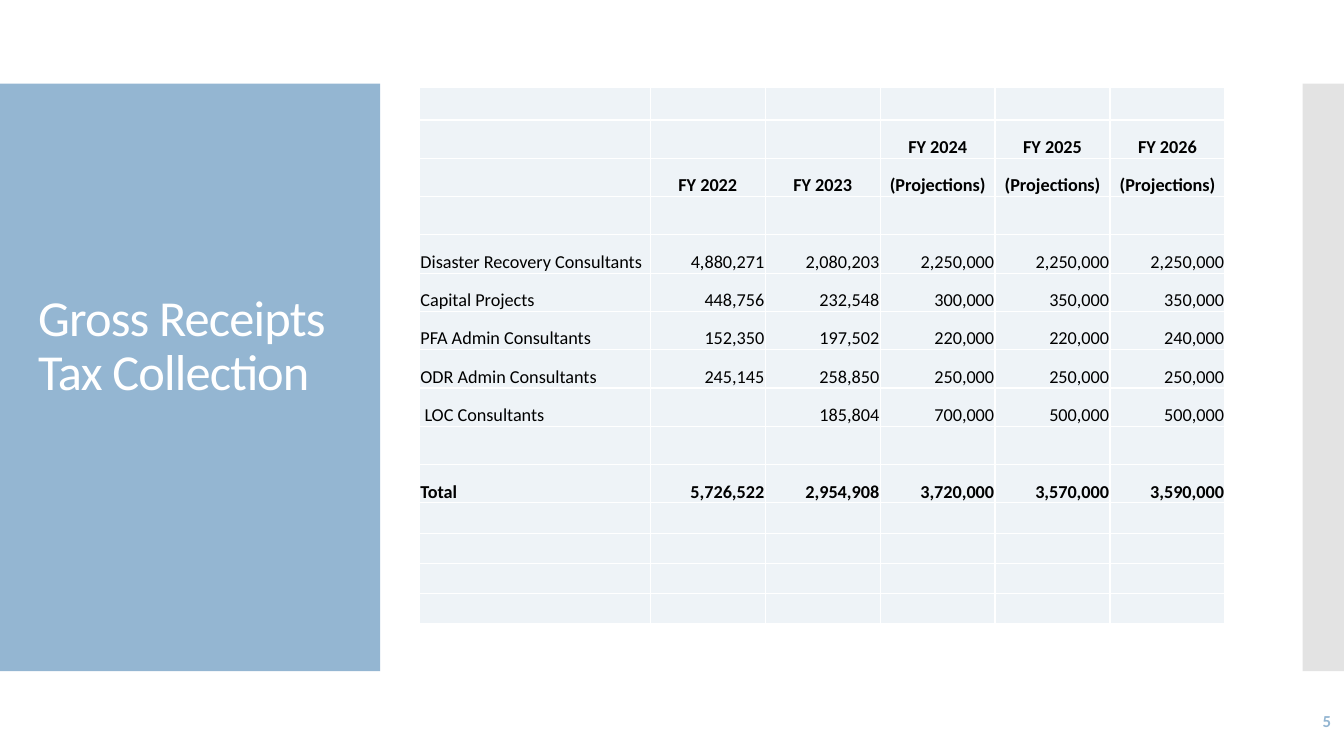
from dataclasses import dataclass

from lxml import etree
from pptx import Presentation
from pptx.dml.color import RGBColor
from pptx.enum.shapes import MSO_SHAPE
from pptx.enum.text import MSO_ANCHOR, PP_ALIGN
from pptx.oxml.ns import qn
from pptx.util import Inches, Pt

RECT = MSO_SHAPE.RECTANGLE
MIDDLE, BOTTOM = MSO_ANCHOR.MIDDLE, MSO_ANCHOR.BOTTOM
LEFT, CENTER, RIGHT = PP_ALIGN.LEFT, PP_ALIGN.CENTER, PP_ALIGN.RIGHT


@dataclass(frozen=True)
class Theme:
    font: str = "Calibri"
    blue: str = "94B6D2"
    gray: str = "C8C8C8"
    white: str = "FFFFFF"
    black: str = "000000"
    pale: str = "EEF3F7"
    title: int = 36
    body: int = 13
    note: int = 12


BLANK = [""] * 6
HEAD = [
    BLANK,
    ["", "", "", "FY 2024", "FY 2025", "FY 2026"],
    ["", "FY 2022", "FY 2023"] + ["(Projections)"] * 3,
    BLANK,
]
ITEMS = [
    ["Disaster Recovery Consultants", "4,880,271", "2,080,203",
     "2,250,000", "2,250,000", "2,250,000"],
    ["Capital Projects", "448,756", "232,548", "300,000", "350,000", "350,000"],
    ["PFA Admin Consultants", "152,350", "197,502", "220,000", "220,000", "240,000"],
    ["ODR Admin Consultants", "245,145", "258,850", "250,000", "250,000", "250,000"],
    [" LOC Consultants", "", "185,804", "700,000", "500,000", "500,000"],
    BLANK,
]
TOTAL = ["Total", "5,726,522", "2,954,908", "3,720,000", "3,570,000", "3,590,000"]
ROWS = HEAD + ITEMS + [TOTAL] + [BLANK] * 4
WIDTHS = [2.29] + [1.14] * 5
HEIGHTS = [0.32] + [0.38] * 10 + [0.3] * 4


class Deck:
    def __init__(self, theme):
        self.theme = theme
        self.prs = Presentation()
        self.prs.slide_width = Inches(13.33)
        self.prs.slide_height = Inches(7.5)
        self.slide = self.prs.slides.add_slide(self.prs.slide_layouts[6])

    def panel(self, box, color, alpha=None):
        """Draw a plain block; alpha is its opacity in percent."""
        shape = self.slide.shapes.add_shape(RECT, *map(Inches, box))
        shape.shadow.inherit = False
        shape.line.fill.background()
        shape.fill.solid()
        shape.fill.fore_color.rgb = RGBColor.from_string(color)
        if alpha is not None:
            tint = shape.fill._xPr.find(".//" + qn("a:srgbClr"))
            etree.SubElement(tint, qn("a:alpha"), val=str(alpha * 1000))

    def run(self, para, text, size, color, bold=False):
        run = para.add_run()
        run.text = text
        font = run.font
        font.name, font.size, font.bold = self.theme.font, Pt(size), bold
        font.color.rgb = RGBColor.from_string(color)
        return run

    def text(self, box, text, size, color, bold=False, align=LEFT,
             lead=1.0, track=0, foot=0.05):
        """Add a text box; track is letter spacing in points, foot the bottom inset."""
        frame = self.slide.shapes.add_textbox(*map(Inches, box)).text_frame
        frame.word_wrap = True
        frame.vertical_anchor = MIDDLE
        frame.margin_bottom = Inches(foot)
        para = frame.paragraphs[0]
        para.alignment, para.line_spacing = align, lead
        run = self.run(para, text, size, color, bold)
        if track:
            run.font._element.set("spc", str(round(track * 100)))

    def edge(self, cell):
        """Give a cell white borders on all four sides."""
        props = cell._tc.get_or_add_tcPr()
        for side in ("lnL", "lnR", "lnT", "lnB"):
            line = etree.SubElement(props, qn("a:" + side), w=str(Pt(1)))
            fill = etree.SubElement(line, qn("a:solidFill"))
            etree.SubElement(fill, qn("a:srgbClr"), val=self.theme.white)

    def cell(self, cell, text, bold, align):
        look = self.theme
        self.edge(cell)
        cell.fill.solid()
        cell.fill.fore_color.rgb = RGBColor.from_string(look.pale)
        cell.vertical_anchor = BOTTOM
        cell.margin_left = cell.margin_right = cell.margin_top = Inches(0.01)
        cell.margin_bottom = 0
        para = cell.text_frame.paragraphs[0]
        para.alignment = align
        if text:
            self.run(para, text, look.body, look.black, bold)
        else:
            etree.SubElement(para._p, qn("a:endParaRPr"), sz=str(look.body * 100))

    def table(self, left, top):
        box = map(Inches, (left, top, sum(WIDTHS), sum(HEIGHTS)))
        grid = self.slide.shapes.add_table(len(ROWS), len(WIDTHS), *box).table
        grid.first_row = grid.horz_banding = False
        for col, width in zip(grid.columns, WIDTHS):
            col.width = Inches(width)
        for r, (row, height) in enumerate(zip(ROWS, HEIGHTS)):
            grid.rows[r].height = Inches(height)
            head = r < len(HEAD)
            bold = head or row is TOTAL
            for c, text in enumerate(row):
                align = CENTER if head else RIGHT if c else LEFT
                self.cell(grid.cell(r, c), text, bold, align)


def main():
    look = Theme()
    deck = Deck(look)
    deck.panel((0, 0.83, 3.77, 5.83), look.blue)
    deck.panel((12.92, 0.83, 0.41, 5.83), look.gray, alpha=50)
    deck.text((0.28, 1.23, 3.22, 5.03), "Gross Receipts Tax Collection",
              look.title, look.white, lead=0.9, track=-0.6, foot=0.65)
    deck.table(4.16, 0.87)
    deck.text((11.63, 6.95, 1.67, 0.4), "5", look.note, look.blue,
              bold=True, align=RIGHT)
    deck.prs.save("out.pptx")


if __name__ == "__main__":
    main()
